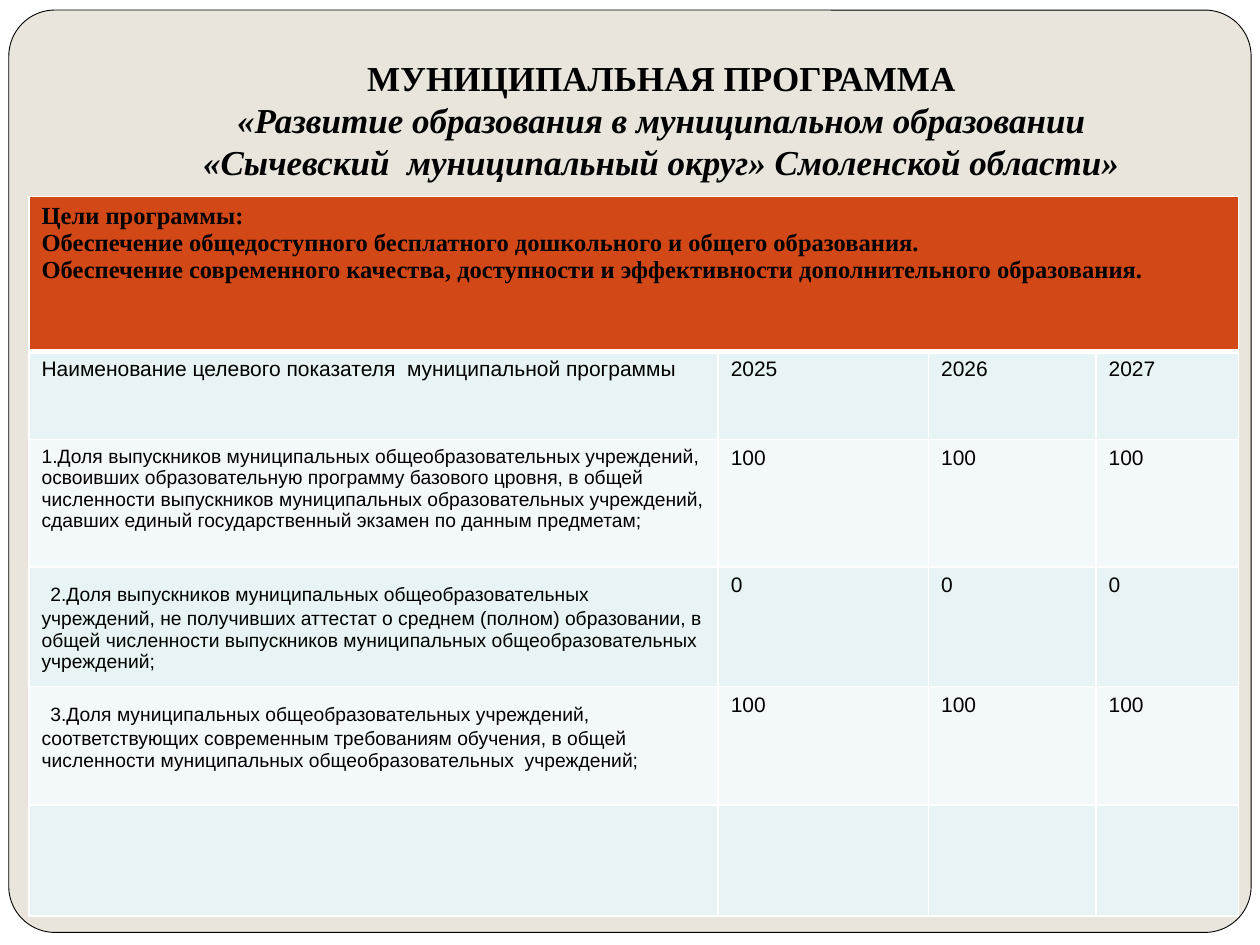
import pptx
import pptx.util
import pptx.dml.color
import pptx.enum.shapes
import pptx.enum.text
import pptx.oxml
import pptx.oxml.ns

Inches = pptx.util.Inches
Pt = pptx.util.Pt


def color(value):
    return pptx.dml.color.RGBColor.from_string(value)


def add_text(paragraph, text, size=12, font="Arial", bold=False, italic=False):
    run = paragraph.add_run()
    run.text = text
    run.font.size = Pt(size)
    run.font.name = font
    run.font.bold = bold
    run.font.italic = italic
    run.font.color.rgb = color("000000")


presentation = pptx.Presentation()
presentation.slide_width = Inches(10)
presentation.slide_height = Inches(7.5)
slide = presentation.slides.add_slide(presentation.slide_layouts[6])
slide.background.fill.solid()
slide.background.fill.fore_color.rgb = color("E9E5DC")

kinds = pptx.enum.shapes.MSO_SHAPE
backdrop = slide.shapes.add_shape(kinds.RECTANGLE, 0, 0, Inches(10), Inches(7.5))
panel = slide.shapes.add_shape(
    kinds.ROUNDED_RECTANGLE, Inches(0.07), Inches(0.08), Inches(9.86), Inches(7.32))
panel.adjustments[0] = 0.05
for shape, fill in ((backdrop, "FFFFFF"), (panel, "E9E5DC")):
    shape.shadow.inherit = False
    shape.fill.solid()
    shape.fill.fore_color.rgb = color(fill)
backdrop.line.fill.background()
panel.line.color.rgb = color("000000")
panel.line.width = Pt(0.5)

title = slide.shapes.add_textbox(Inches(1), Inches(0.3), Inches(8.5), Inches(1.25))
frame = title.text_frame
frame.word_wrap = True
frame.vertical_anchor = pptx.enum.text.MSO_ANCHOR.BOTTOM
frame.margin_bottom = Inches(0.1)
paragraph = frame.paragraphs[0]
paragraph.alignment = pptx.enum.text.PP_ALIGN.CENTER
title_lines = [
    "МУНИЦИПАЛЬНАЯ ПРОГРАММА",
    "«Развитие образования в муниципальном образовании",
    "«Сычевский  муниципальный округ» Смоленской области»",
]
for index, line in enumerate(title_lines):
    if index:
        paragraph.add_line_break()
    add_text(paragraph, line, size=20, font="Times New Roman", bold=True, italic=index > 0)

goals = [
    "Цели программы:",
    "Обеспечение общедоступного бесплатного дошкольного и общего образования.",
    "Обеспечение современного качества, доступности и эффективности дополнительного образования.",
]
indicators = [
    ("Наименование целевого показателя  муниципальной программы", "2025", "2026", "2027"),
    ("1.Доля выпускников муниципальных общеобразовательных учреждений, освоивших "
     "образовательную программу базового цровня, в общей численности выпускников "
     "муниципальных образовательных учреждений, сдавших единый государственный экзамен "
     "по данным предметам;", "100", "100", "100"),
    ("2.Доля выпускников муниципальных общеобразовательных учреждений, не получивших "
     "аттестат о среднем (полном) образовании, в общей численности выпускников "
     "муниципальных общеобразовательных  учреждений;", "0", "0", "0"),
    ("3.Доля муниципальных общеобразовательных учреждений, соответствующих современным "
     "требованиям обучения, в общей численности муниципальных общеобразовательных  "
     "учреждений;", "100", "100", "100"),
]
column_widths = [5.47, 1.67, 1.33, 1.13]
row_heights = [1.23, 0.7, 1.01, 0.94, 0.94, 0.88]
table = slide.shapes.add_table(
    len(row_heights), len(column_widths),
    Inches(0.23), Inches(1.56), Inches(9.61), Inches(5.72)).table
table.first_row = False
table.horz_banding = False
for column, width in zip(table.columns, column_widths):
    column.width = Inches(width)

for row_index, height in enumerate(row_heights):
    row = table.rows[row_index]
    row.height = Inches(height)
    fill = "D34817" if row_index == 0 else ("F3F9FA", "E7F3F4")[row_index % 2]
    border_widths = {"L": 1, "R": 1, "T": 3 if row_index == 1 else 1, "B": 3 if row_index == 0 else 1}
    for cell in row.cells:
        properties = cell._tc.get_or_add_tcPr()
        for side, width in border_widths.items():
            properties.append(pptx.oxml.parse_xml(
                f'<a:ln{side} {pptx.oxml.ns.nsdecls("a")} w="{Pt(width)}">'
                f'<a:solidFill><a:srgbClr val="FFFFFF"/></a:solidFill></a:ln{side}>'))
        cell.fill.solid()
        cell.fill.fore_color.rgb = color(fill)

header = table.cell(0, 0)
header.merge(table.cell(0, 3))
for index, goal in enumerate(goals):
    paragraph = header.text_frame.add_paragraph() if index else header.text_frame.paragraphs[0]
    add_text(paragraph, goal, size=14, font="Times New Roman", bold=True)

for row_index, values in enumerate(indicators, start=1):
    for column_index, value in enumerate(values):
        paragraph = table.cell(row_index, column_index).text_frame.paragraphs[0]
        is_indicator = column_index == 0 and row_index > 1
        if is_indicator and row_index > 2:
            add_text(paragraph, " ", size=18)
        add_text(paragraph, value, size=11 if is_indicator else 12)

presentation.save("out.pptx")
